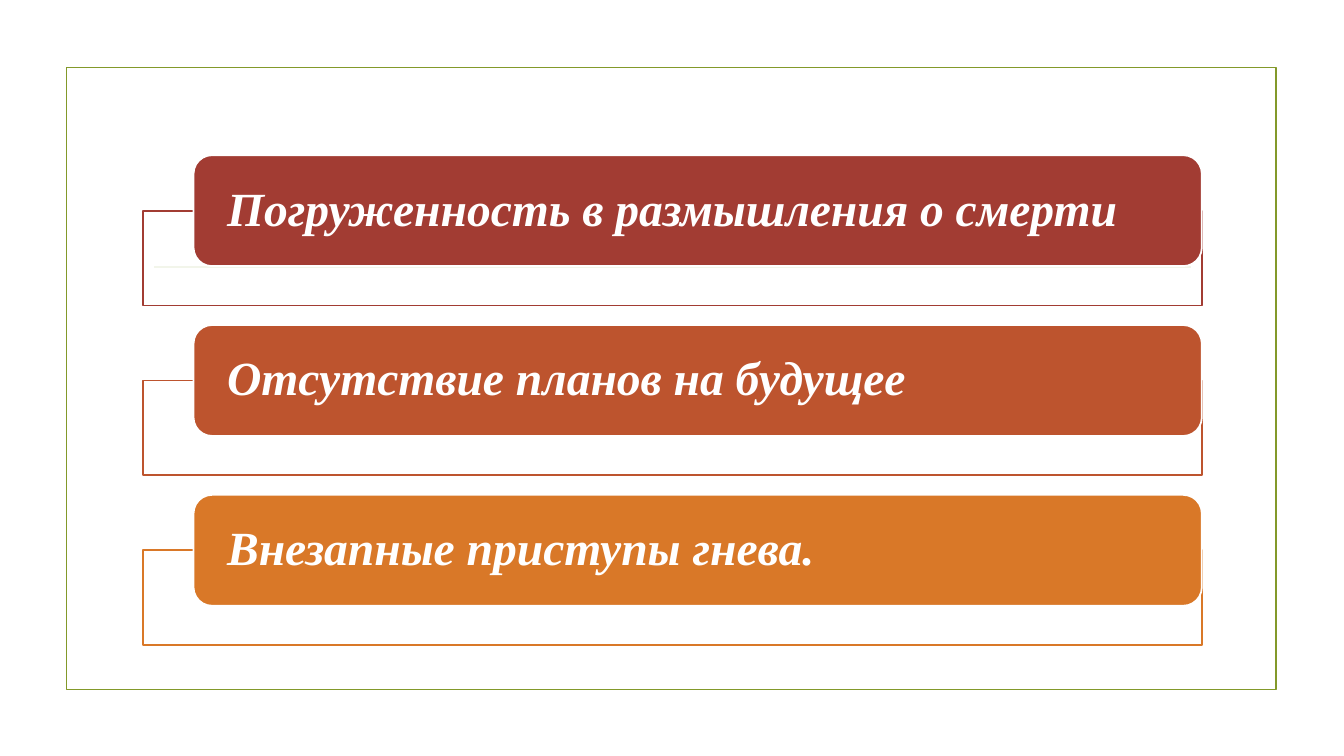
"""Build a slide listing three warning signs as stacked banners in a frame."""
from lxml import etree
from pptx import Presentation
from pptx import util as u
from pptx.dml.color import RGBColor
from pptx.enum import shapes, text
from pptx.oxml.ns import qn

COLORS = {
    "white": "FFFFFF",
    "olive": "83992A",
    "red": "A23C33",
    "rust": "BD542E",
    "orange": "D97828",
}
SIGNS = [
    ("Погруженность в размышления о смерти", "red"),
    ("Отсутствие планов на будущее", "rust"),
    ("Внезапные приступы гнева.", "orange"),
]
FIRST_TOP = 1.54
PITCH = 3.37 / 2
BAR_HEIGHT = 1.1


def rgb(name):
    return RGBColor.from_string(COLORS[name])


def add_box(kind, left, top, width, height, fill, line):
    sp = slide.shapes.add_shape(
        kind, u.Inches(left), u.Inches(top), u.Inches(width), u.Inches(height))
    sp.shadow.inherit = False
    if fill:
        sp.fill.solid()
        sp.fill.fore_color.rgb = rgb(fill)
    else:
        sp.fill.background()
    sp.line.color.rgb = rgb(line)
    sp.line.width = u.Pt(1.25)
    return sp


prs = Presentation()
prs.slide_width = u.Inches(13.33)
prs.slide_height = u.Inches(7.5)
slide = prs.slides.add_slide(prs.slide_layouts[6])

add_box(shapes.MSO_SHAPE.RECTANGLE, 0.66, 0.67, 12, 6.17, None, "olive")

rule = slide.shapes.add_connector(
    shapes.MSO_CONNECTOR.STRAIGHT,
    u.Inches(1.53), u.Inches(2.65), u.Inches(11.81), u.Inches(2.65))
rule.line.color.rgb = rgb("olive")
rule.line.width = u.Pt(1.25)
etree.SubElement(rule._element.spPr, qn("a:effectLst"))

for i, (sign, color) in enumerate(SIGNS):
    top = FIRST_TOP + i * PITCH

    outline = add_box(shapes.MSO_SHAPE.RECTANGLE, 1.42, top + BAR_HEIGHT / 2,
                      10.5, 0.94, "white", color)
    white = outline._element.spPr.find(qn("a:solidFill")).find(qn("a:srgbClr"))
    etree.SubElement(white, qn("a:alpha"), val="90000")

    bar = add_box(shapes.MSO_SHAPE.ROUNDED_RECTANGLE, 1.92, top,
                  10, BAR_HEIGHT, color, "white")
    tf = bar.text_frame
    tf.word_wrap = True
    tf.vertical_anchor = text.MSO_ANCHOR.MIDDLE
    tf.margin_left = tf.margin_right = u.Inches(0.28)
    tf.margin_top = tf.margin_bottom = 0
    tf.text = sign
    p = tf.paragraphs[0]
    p.alignment = text.PP_ALIGN.LEFT
    p.line_spacing = 0.9
    r = p.runs[0]
    r.font.name = "Times New Roman"
    r.font.size = u.Pt(34)
    r.font.bold = True
    r.font.italic = True
    r.font.color.rgb = rgb("white")

prs.save("out.pptx")
